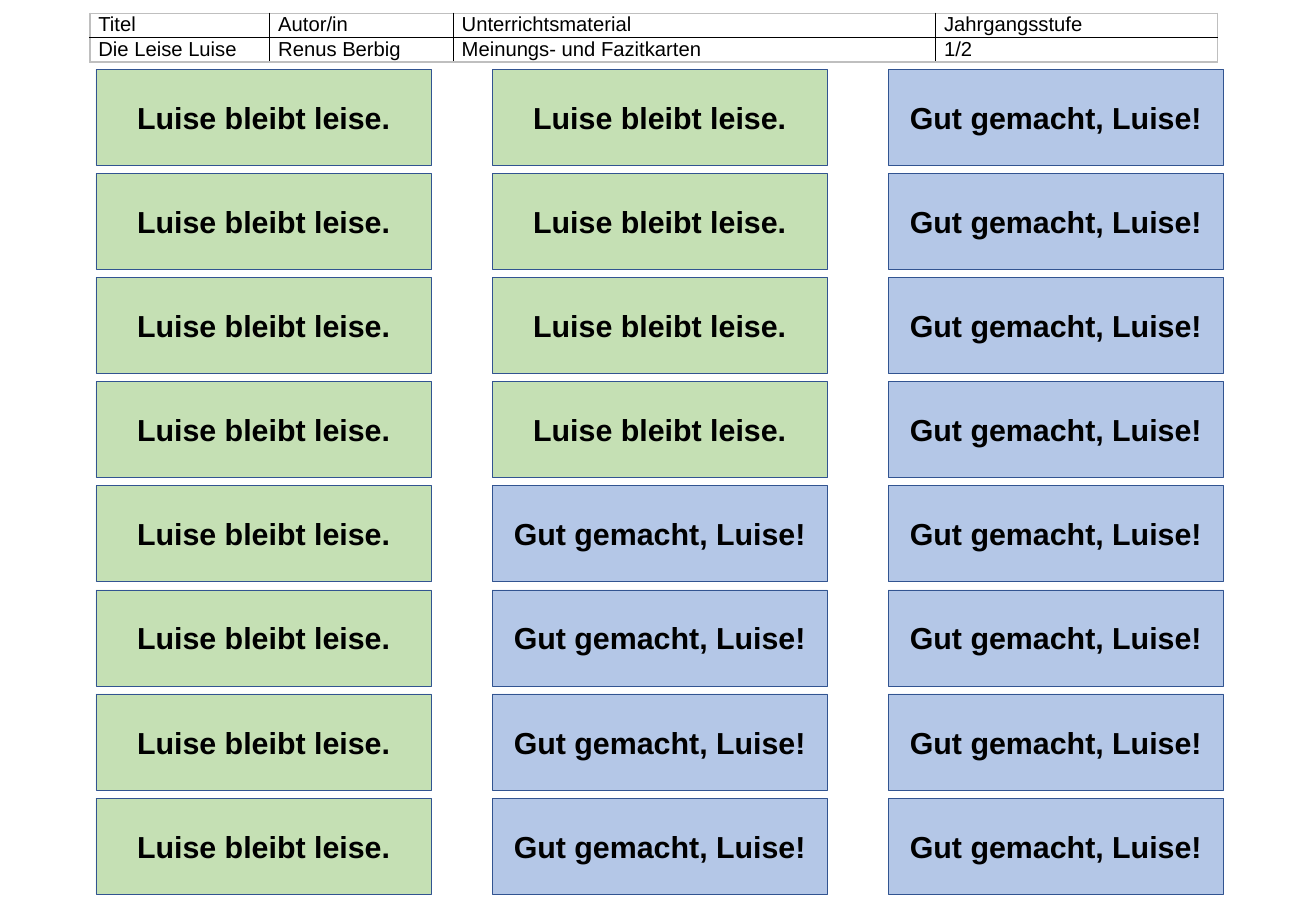
import pptx
import pptx.dml.color
import pptx.enum.shapes
import pptx.enum.text
import pptx.oxml
import pptx.oxml.ns
import pptx.util

Inches, Pt = pptx.util.Inches, pptx.util.Pt
RGBColor = pptx.dml.color.RGBColor
PP_ALIGN, MSO_ANCHOR = pptx.enum.text.PP_ALIGN, pptx.enum.text.MSO_ANCHOR

BLACK = RGBColor(0x00, 0x00, 0x00)
GRAY = RGBColor(0xBF, 0xBF, 0xBF)
GREEN = RGBColor(0xC5, 0xE0, 0xB4)
BLUE = RGBColor(0xB4, 0xC7, 0xE7)
CARD_LINE = RGBColor(0x32, 0x54, 0x91)

HEADER = [
    ["Titel", "Autor/in", "Unterrichtsmaterial", "Jahrgangsstufe"],
    ["Die Leise Luise", "Renus Berbig", "Meinungs- und Fazitkarten", "1/2"],
]
HEADER_WIDTHS = [1.48, 1.51, 3.97, 2.32]
OPINION = ("Luise bleibt leise.", GREEN)
CONCLUSION = ("Gut gemacht, Luise!", BLUE)
CARD_COLUMNS = [[OPINION] * 8, [OPINION] * 4 + [CONCLUSION] * 4, [CONCLUSION] * 8]


def write(tf, text, size=12, bold=False, color=BLACK, font="Arial", align=PP_ALIGN.LEFT):
    p = tf.paragraphs[0]
    p.alignment = align
    r = p.add_run()
    r.text = text
    r.font.name = font
    r.font.size = Pt(size)
    r.font.bold = bold
    r.font.color.rgb = color


def set_borders(cell, colors):
    """Draw the cell's left, right, top and bottom borders in the given colours."""
    tc_pr = cell._tc.get_or_add_tcPr()
    for i, (side, color) in enumerate(zip("LRTB", colors)):
        tc_pr.insert(i, pptx.oxml.parse_xml(
            f'<a:ln{side} {pptx.oxml.ns.nsdecls("a")} w="{Pt(1)}">'
            f'<a:solidFill><a:srgbClr val="{color}"/></a:solidFill></a:ln{side}>'))


class CardSheet:
    def __init__(self, prs):
        self.s = prs.slides.add_slide(prs.slide_layouts[6])
        self.card_size = Inches(2.76), Inches(0.79)

    def card(self, x, y, text, fill):
        sp = self.s.shapes.add_shape(pptx.enum.shapes.MSO_SHAPE.RECTANGLE,
                                     Inches(x), Inches(y), *self.card_size)
        sp.shadow.inherit = False
        sp.fill.solid()
        sp.fill.fore_color.rgb = fill
        sp.line.color.rgb = CARD_LINE
        sp.line.width = Pt(0.25)
        tf = sp.text_frame
        tf.word_wrap = True
        tf.vertical_anchor = MSO_ANCHOR.MIDDLE
        write(tf, text, size=18, bold=True, align=PP_ALIGN.CENTER)

    def table(self, x, y, widths, row_height, rows):
        """Add a plain table with black inner and gray outer borders."""
        last_row, last_col = len(rows) - 1, len(widths) - 1
        table = self.s.shapes.add_table(
            len(rows), len(widths), Inches(x), Inches(y),
            Inches(sum(widths)), Inches(row_height * len(rows))).table
        table.first_row = table.horz_banding = False
        for column, width in zip(table.columns, widths):
            column.width = Inches(width)
        for i, row in enumerate(rows):
            for j, text in enumerate(row):
                cell = table.cell(i, j)
                cell.margin_left = cell.margin_right = Inches(0.07)
                cell.margin_top = cell.margin_bottom = 0
                cell.fill.background()
                outer = (j == 0, j == last_col, i == 0, i == last_row)
                set_borders(cell, [GRAY if edge else BLACK for edge in outer])
                write(cell.text_frame, text)


def main():
    prs = pptx.Presentation()
    prs.slide_width, prs.slide_height = Inches(10.83), Inches(7.5)
    sheet = CardSheet(prs)
    for col, cards in enumerate(CARD_COLUMNS):
        for row, (text, fill) in enumerate(cards):
            sheet.card(0.79 + 3.26 * col, 0.57 + row * 6 / 7, text, fill)
    sheet.table(0.74, 0.11, HEADER_WIDTHS, 0.2, HEADER)
    prs.save("out.pptx")


if __name__ == "__main__":
    main()
